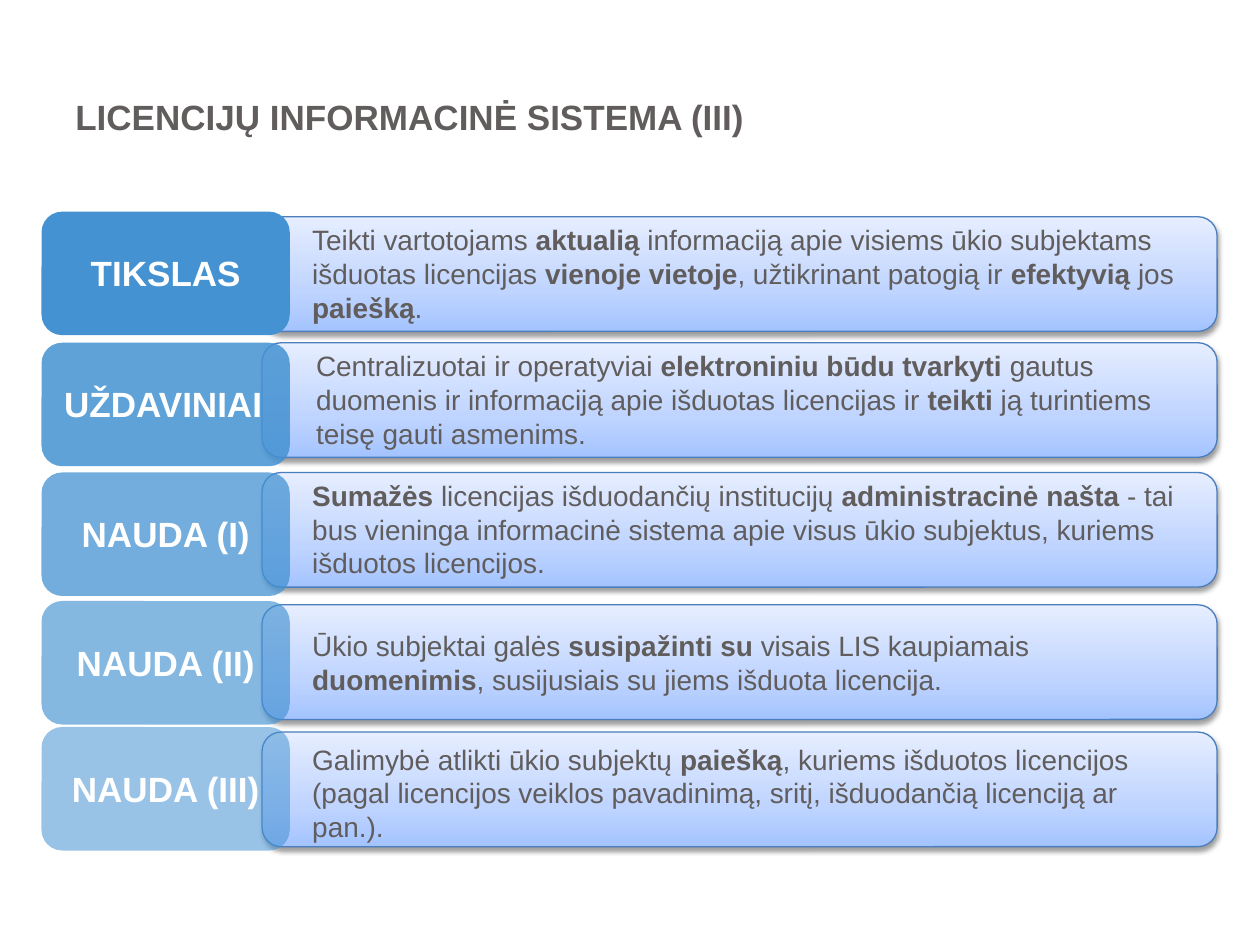
from lxml import etree
from pptx import Presentation
from pptx.dml.color import RGBColor
from pptx.enum.shapes import MSO_SHAPE
from pptx.enum.text import MSO_ANCHOR, MSO_AUTO_SIZE, PP_ALIGN
from pptx.oxml.ns import qn
from pptx.util import Inches, Pt

ROUNDED = MSO_SHAPE.ROUNDED_RECTANGLE
TOP, MIDDLE = MSO_ANCHOR.TOP, MSO_ANCHOR.MIDDLE
LEFT, CENTER = PP_ALIGN.LEFT, PP_ALIGN.CENTER
FIT_SHAPE, NO_FIT = MSO_AUTO_SIZE.SHAPE_TO_FIT_TEXT, MSO_AUTO_SIZE.NONE

GREY = RGBColor(0x60, 0x5D, 0x5C)
WHITE = RGBColor(0xFF, 0xFF, 0xFF)
TAG_BLUE = RGBColor(0x44, 0x92, 0xD2)
EDGE_BLUE = RGBColor(0x4B, 0x7E, 0xBC)
BLACK = RGBColor(0x00, 0x00, 0x00)
PANEL_STOPS = [
    (0, RGBColor(0xA4, 0xC4, 0xFF)),
    (35, RGBColor(0xBF, 0xD4, 0xFF)),
    (100, RGBColor(0xE6, 0xEE, 0xFF)),
]

TITLE = "LICENCIJŲ INFORMACINĖ SISTEMA (III)"
ROWS = [
    dict(label="TIKSLAS", opacity=100, tag_top=1.68, panel_top=1.72,
         text_box=(2.38, 1.72, 7.16, 0.91),
         text="Teikti vartotojams **aktualią** informaciją apie visiems ūkio "
              "subjektams išduotas licencijas **vienoje vietoje**, užtikrinant "
              "patogią ir **efektyvią** jos **paiešką**."),
    dict(label="UŽDAVINIAI", opacity=85, tag_top=2.72, panel_top=2.72,
         text_box=(2.41, 2.72, 7.08, 0.91), label_left=0.37,
         text="Centralizuotai ir operatyviai **elektroniniu būdu tvarkyti** "
              "gautus duomenis ir informaciją apie išduotas licencijas ir "
              "**teikti** ją turintiems teisę gauti asmenims."),
    dict(label="NAUDA (I)", opacity=75, tag_top=3.75, panel_top=3.75,
         text_box=(2.38, 3.75, 7.16, 0.91),
         text="**Sumažės** licencijas išduodančių institucijų "
              "**administracinė našta** - tai bus vieninga informacinė sistema "
              "apie visus ūkio subjektus, kuriems išduotos licencijos."),
    dict(label="NAUDA (II)", opacity=65, tag_top=4.77, panel_top=4.8,
         text_box=(2.38, 4.94, 7.16, 0.64),
         text="Ūkio subjektai galės **susipažinti su** visais LIS kaupiamais "
              "**duomenimis**, susijusiais su jiems išduota licencija."),
    dict(label="NAUDA (III)", opacity=55, tag_top=5.77, panel_top=5.81,
         text_box=(2.38, 5.84, 7.16, 0.91),
         text="Galimybė atlikti ūkio subjektų **paiešką**, kuriems išduotos "
              "licencijos (pagal licencijos veiklos pavadinimą, sritį, "
              "išduodančią licenciją ar pan.)."),
]


def place(box):
    return [Inches(value) for value in box]


def add_text(shapes, box, text, size=16, color=GREY, bold=False,
             align=LEFT, anchor=TOP, fit=FIT_SHAPE):
    frame = shapes.add_textbox(*place(box)).text_frame
    frame.word_wrap = True
    frame.auto_size = fit
    frame.vertical_anchor = anchor
    para = frame.paragraphs[0]
    para.alignment = align
    for index, piece in enumerate(text.split("**")):
        if not piece:
            continue
        span = para.add_run()
        span.text = piece
        span.font.name = "Arial"
        span.font.size = Pt(size)
        span.font.bold = bold or index % 2 == 1
        span.font.color.rgb = color


def add_color(parent, color, opacity=100):
    node = etree.SubElement(parent, qn("a:srgbClr"), val=str(color))
    if opacity < 100:
        etree.SubElement(node, qn("a:alpha"), val=str(opacity * 1000))


def add_panel(shapes, box):
    panel = shapes.add_shape(ROUNDED, *place(box))
    panel.line.color.rgb = EDGE_BLUE
    panel.line.width = Pt(0.75)
    panel.fill.gradient()
    panel.fill.gradient_angle = 90
    properties = panel._element.spPr
    stops = properties.find(qn("a:gradFill")).find(qn("a:gsLst"))
    for stop in list(stops):
        stops.remove(stop)
    for position, color in PANEL_STOPS:
        stop = etree.SubElement(stops, qn("a:gs"), pos=str(position * 1000))
        add_color(stop, color)
    panel.shadow.inherit = False
    shadow = etree.SubElement(
        properties.find(qn("a:effectLst")), qn("a:outerShdw"),
        blurRad=str(Pt(3.1)), dist=str(Pt(1.6)), dir="5400000", rotWithShape="0")
    add_color(shadow, BLACK, 38)


def add_tag(shapes, box, opacity):
    tag = shapes.add_shape(ROUNDED, *place(box))
    tag.shadow.inherit = False
    tag.line.fill.background()
    tag.fill.solid()
    tag.fill.fore_color.rgb = TAG_BLUE
    if opacity < 100:
        color = tag._element.spPr.find(qn("a:solidFill")).find(qn("a:srgbClr"))
        etree.SubElement(color, qn("a:alpha"), val=str(opacity * 1000))


def add_row(page, label, text, opacity, tag_top, panel_top, text_box,
            label_left=0.39):
    shapes = page.shapes.add_group_shape().shapes
    add_panel(shapes, (2.08, panel_top, 7.58, 0.91))
    add_text(shapes, text_box, text)
    add_tag(shapes, (0.33, tag_top, 1.97, 0.98), opacity)
    add_text(shapes, (label_left, tag_top + 0.27, 1.85, 0.45), label,
             size=20, color=WHITE, bold=True, align=CENTER)


def main():
    deck = Presentation()
    deck.slide_width, deck.slide_height = Inches(10), Inches(7.5)
    page = deck.slides.add_slide(deck.slide_layouts[6])
    add_text(page.shapes, (0.5, 0.3, 9, 1.25), TITLE, size=20, bold=True,
             anchor=MIDDLE, fit=NO_FIT)
    for row in ROWS:
        add_row(page, **row)
    deck.save("out.pptx")


if __name__ == "__main__":
    main()
